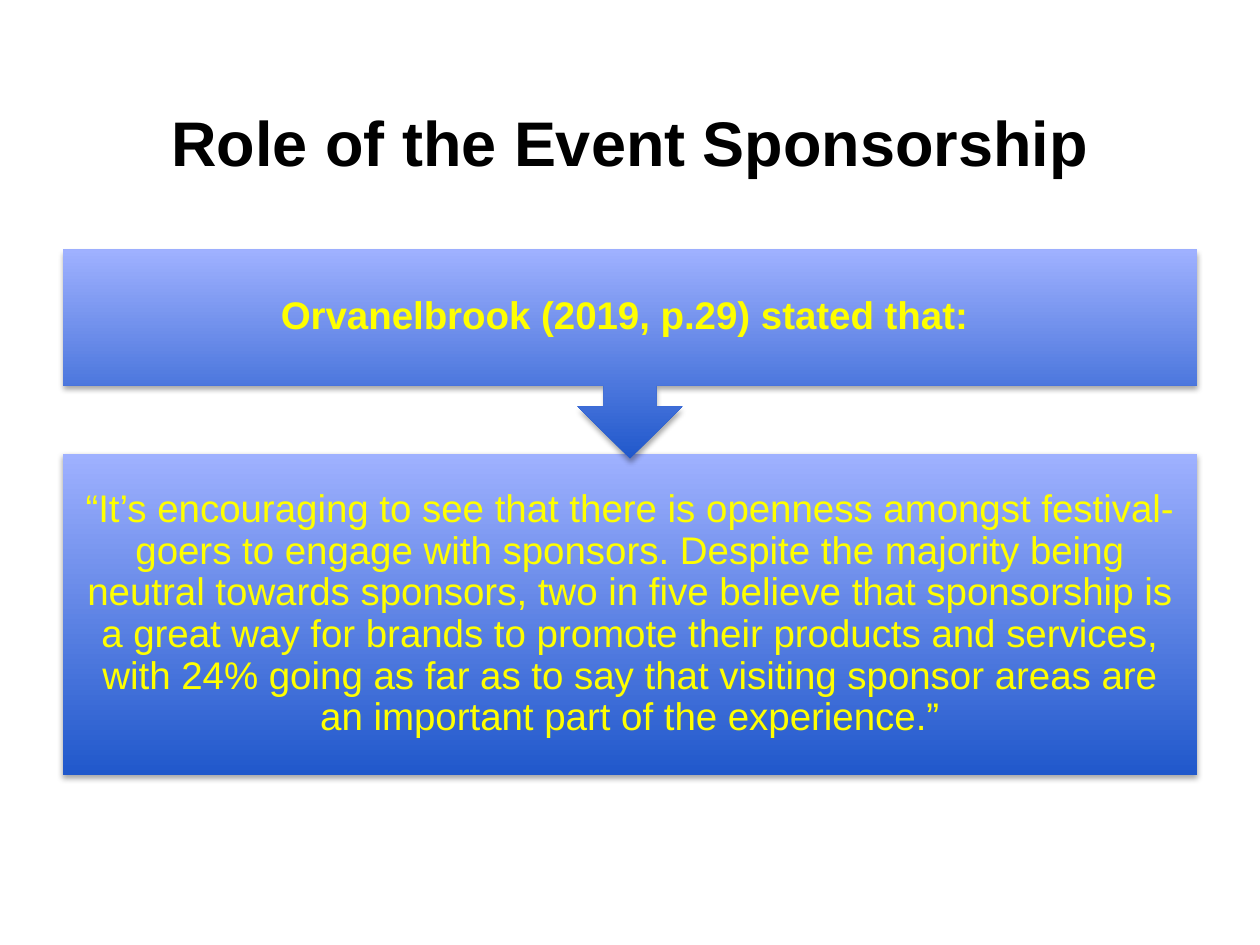
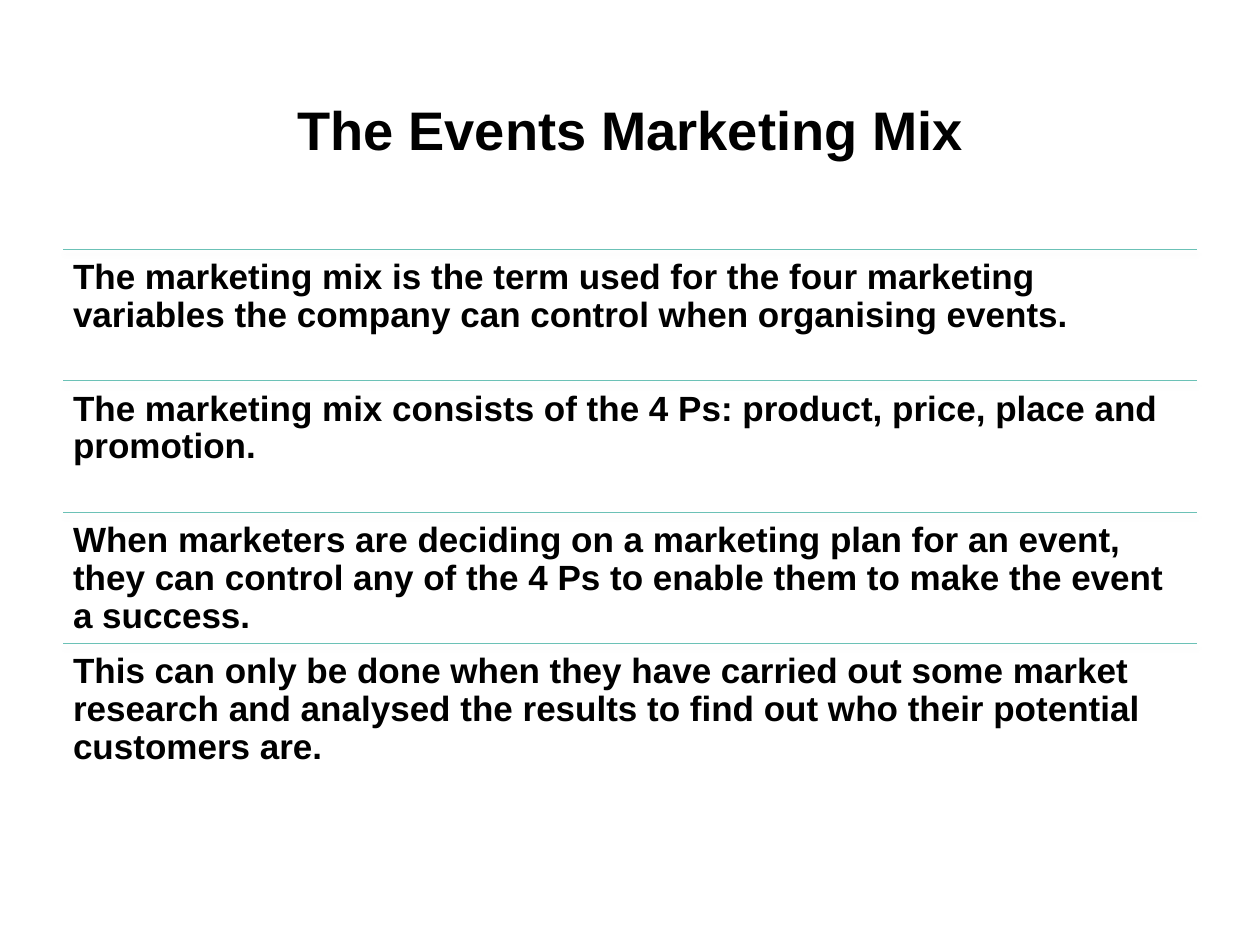
from lxml import etree
from pptx import Presentation
from pptx.dml.color import RGBColor
from pptx.enum import shapes, text
from pptx.oxml import ns
from pptx.util import Inches, Pt

BLACK = RGBColor(0x00, 0x00, 0x00)
YELLOW = RGBColor(0xFF, 0xFF, 0x00)
DEEP_BLUE = RGBColor(0x20, 0x58, 0xCB)
PALE_BLUE = RGBColor(0x9F, 0xB1, 0xFF)
TEAL = RGBColor(0x6B, 0xC1, 0xB6)
FONT = "Arial"
LEFT, WIDTH = 0.5, 9
CONTENT_TOP, CONTENT_BOTTOM = 1.98, 6.15


def write(box, words, size, colour, bold, align, anchor, inset, spacing=0.9):
    frame = box.text_frame
    frame.word_wrap = True
    frame.vertical_anchor = anchor
    frame.margin_left = frame.margin_right = Inches(inset)
    frame.margin_top = frame.margin_bottom = Inches(inset)
    para = frame.paragraphs[0]
    para.text = words
    para.alignment = align
    para.line_spacing = spacing
    para.font.name = FONT
    para.font.size = Pt(size)
    para.font.bold = bold
    para.font.color.rgb = colour


def add_shadow(item):
    effects = etree.SubElement(item._element.spPr, ns.qn("a:effectLst"))
    shadow = etree.SubElement(
        effects, ns.qn("a:outerShdw"), blurRad=str(Pt(3.1)), dist=str(Pt(1.8)),
        dir="5400000", rotWithShape="0")
    colour = etree.SubElement(shadow, ns.qn("a:srgbClr"), val=str(BLACK))
    etree.SubElement(colour, ns.qn("a:alpha"), val="35000")


deck = Presentation()
deck.slide_width = Inches(10)
deck.slide_height = Inches(7.5)

pages = []
for title, size, spacing in [("Role of the Event Sponsorship", 36, 1.0),
                             ("The Events Marketing Mix", 31, 0.9)]:
    page = deck.slides.add_slide(deck.slide_layouts[6])
    box = page.shapes.add_textbox(Inches(LEFT), Inches(0.73), Inches(WIDTH), Inches(1.05))
    write(box, title, size, BLACK, True, text.PP_ALIGN.CENTER,
          text.MSO_ANCHOR.TOP, 0.09, spacing)
    pages.append(page)
sponsorship, marketing_mix = pages

quote = (
    "“It’s encouraging to see that there is openness amongst festival-goers to engage "
    "with sponsors. Despite the majority being neutral towards sponsors, two in five "
    "believe that sponsorship is a great way for brands to promote their products and "
    "services, with 24% going as far as to say that visiting sponsor areas are an "
    "important part of the experience.”")
panels = [
    (shapes.MSO_SHAPE.RECTANGLE, 3.6, 2.55, quote, False),
    (shapes.MSO_SHAPE.DOWN_ARROW_CALLOUT, CONTENT_TOP, 1.66,
     "Orvanelbrook (2019, p.29) stated that: ", True),
]
for kind, top, height, words, bold in panels:
    panel = sponsorship.shapes.add_shape(
        kind, Inches(LEFT), Inches(top), Inches(WIDTH), Inches(height))
    panel.fill.gradient()
    panel.fill.gradient_angle = 90
    for stop, colour in zip(panel.fill.gradient_stops, (DEEP_BLUE, PALE_BLUE)):
        stop.color.rgb = colour
    panel.line.fill.background()
    add_shadow(panel)
    write(panel, words, 22, YELLOW, bold, text.PP_ALIGN.CENTER,
          text.MSO_ANCHOR.MIDDLE, 0.17)

points = [
    "The marketing mix is the term used for the four marketing variables the company "
    "can control when organising events.",
    "The marketing mix consists of the 4 Ps: product, price, place and promotion.",
    "When marketers are deciding on a marketing plan for an event, they can control any "
    "of the 4 Ps to enable them to make the event a success.",
    "This can only be done when they have carried out some market research and analysed "
    "the results to find out who their potential customers are.",
]
row_height = (CONTENT_BOTTOM - CONTENT_TOP) / len(points)
for index, point in enumerate(points):
    top = Inches(CONTENT_TOP + index * row_height)
    rule = marketing_mix.shapes.add_connector(
        shapes.MSO_CONNECTOR.STRAIGHT, Inches(LEFT), top, Inches(LEFT + WIDTH), top)
    rule.line.color.rgb = TEAL
    rule.line.width = Pt(0.75)
    add_shadow(rule)
    box = marketing_mix.shapes.add_textbox(
        Inches(LEFT), top, Inches(WIDTH), Inches(row_height))
    write(box, point, 20, BLACK, True, text.PP_ALIGN.LEFT, text.MSO_ANCHOR.TOP, 0.08)

deck.save("out.pptx")
